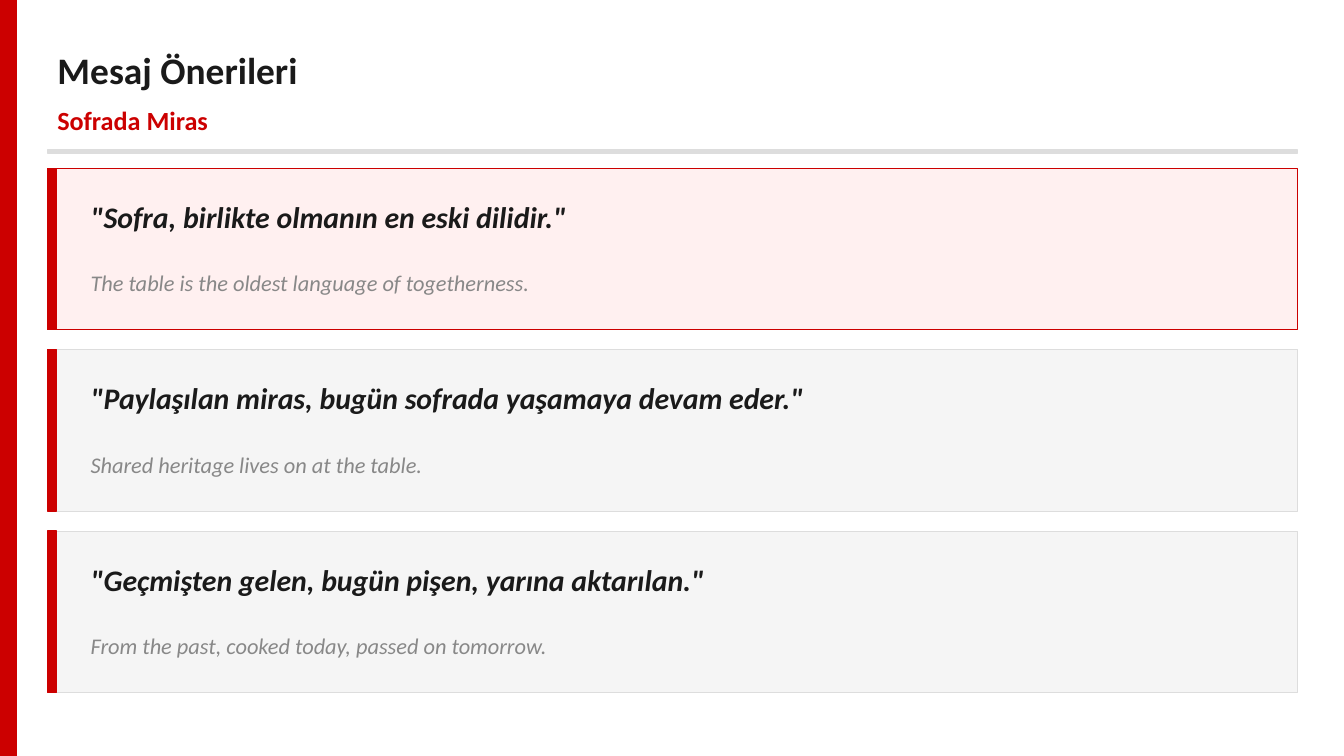
from pptx import Presentation
from pptx.dml.color import RGBColor as Rgb
from pptx.enum.shapes import MSO_SHAPE as Shape
from pptx.enum.text import MSO_ANCHOR as Anchor, MSO_AUTO_SIZE as Fit, PP_ALIGN as Align
from pptx.util import Pt

PX = 9144
THEME = {
    "font": "Calibri",
    "red": "CC0000", "ink": "1A1A1A", "gray": "888888", "rule": "DDDDDD",
    "rose": "FFF0F0", "pale": "F5F5F5", "white": "FFFFFF",
    "title": 26.7, "sub": 18.7, "quote": 21.3, "gloss": 16,
}

deck = Presentation()
deck.slide_width, deck.slide_height = 1333 * PX, 750 * PX
slide = deck.slides.add_slide(deck.slide_layouts[5])
slide.background.fill.solid()
slide.background.fill.fore_color.rgb = Rgb.from_string(THEME["white"])


def block(x, y, w, h, fill, edge, line=1):
    rect = slide.shapes.add_shape(Shape.RECTANGLE, x * PX, y * PX, w * PX, h * PX)
    rect.shadow.inherit = False
    rect.fill.solid()
    rect.fill.fore_color.rgb = Rgb.from_string(THEME[fill])
    rect.line.color.rgb = Rgb.from_string(THEME[edge])
    rect.line.width = Pt(line)


def label(box, x, y, w, h, text, size, color, bold=False, slant=False):
    box.left, box.top, box.width, box.height = x * PX, y * PX, w * PX, h * PX
    frame = box.text_frame
    frame.text = text
    frame.word_wrap = True
    frame.auto_size = Fit.NONE
    frame.vertical_anchor = Anchor.MIDDLE
    para = frame.paragraphs[0]
    para.alignment = Align.LEFT
    font = para.runs[0].font
    font.name = THEME["font"]
    font.size = Pt(THEME[size])
    font.color.rgb = Rgb.from_string(THEME[color])
    font.bold, font.italic = bold, slant


LEFT, WIDE = 47, 1240
block(0, 0, 16, 750, "red", "red")
label(slide.shapes.title, LEFT, 37, WIDE, 64, "Mesaj Önerileri", "title", "ink", bold=True)
sub = slide.shapes.add_textbox(0, 0, 0, 0)
label(sub, LEFT, 96, WIDE, 47, "Sofrada Miras", "sub", "red", bold=True)
block(LEFT, 149, WIDE, 3, "rule", "rule")

TOP, STEP, TALL = 167, 180, 160
cards = [
    ('"Sofra, birlikte olmanın en eski dilidir."',
     "The table is the oldest language of togetherness.", "rose", "red", 1),
    ('"Paylaşılan miras, bugün sofrada yaşamaya devam eder."',
     "Shared heritage lives on at the table.", "pale", "rule", 0.5),
    ('"Geçmişten gelen, bugün pişen, yarına aktarılan."',
     "From the past, cooked today, passed on tomorrow.", "pale", "rule", 0.5),
]
for row, (quote, gloss, fill, edge, line) in enumerate(cards):
    y = TOP + row * STEP
    block(LEFT, y, WIDE, TALL, fill, edge, line)
    block(LEFT, y, 9, TALL, "red", "red")
    head = slide.shapes.add_textbox(0, 0, 0, 0)
    label(head, 80, y + 13, 1173, 69, quote, "quote", "ink", bold=True, slant=True)
    note = slide.shapes.add_textbox(0, 0, 0, 0)
    label(note, 80, y + 88, 1173, 51, gloss, "gloss", "gray", slant=True)

deck.save("out.pptx")
